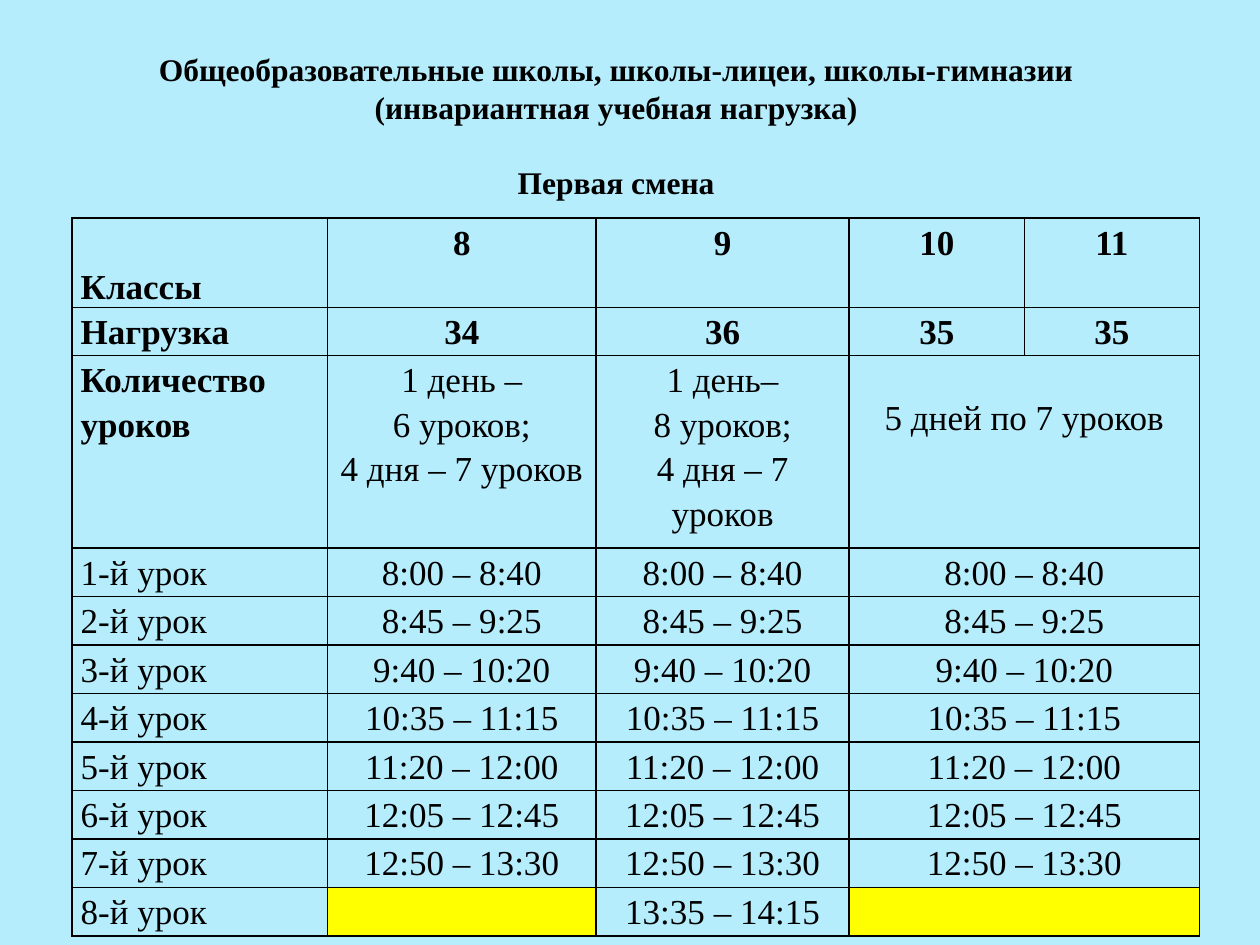
from lxml.etree import SubElement
from pptx import Presentation
from pptx.dml.color import RGBColor
from pptx.enum.text import MSO_ANCHOR, MSO_AUTO_SIZE, PP_ALIGN
from pptx.oxml.ns import qn
from pptx.util import Inches, Pt

FONT = "Times New Roman"
BLACK = RGBColor(0x00, 0x00, 0x00)
SKY = RGBColor(0xB5, 0xED, 0xFD)
YELLOW = RGBColor(0xFF, 0xFF, 0x00)

TITLE = [
    "Общеобразовательные школы, школы-лицеи, школы-гимназии",
    "(инвариантная учебная нагрузка)",
    "Первая смена",
]
HEADER = [
    ["Классы", "8", "9", "10", "11"],
    ["Нагрузка", "34", "36", "35", "35"],
    ["Количество уроков", "1 день –\n6 уроков;\n4 дня – 7 уроков",
     "1 день–\n8 уроков;\n4 дня – 7 уроков", "5 дней по 7 уроков", ""],
]
TIMES = ["8:00 – 8:40", "8:45 – 9:25", "9:40 – 10:20", "10:35 – 11:15",
         "11:20 – 12:00", "12:05 – 12:45", "12:50 – 13:30"]
LESSONS = [[f"{n}-й урок", t, t, t, ""] for n, t in enumerate(TIMES, 1)]
LAST = ["8-й урок", "", "13:35 – 14:15", "", ""]
ROWS = HEADER + LESSONS + [LAST]

COLS = [2.03, 2.13, 2.01, 1.39, 1.39]
HEIGHTS = [0.71, 0.38, 1.53] + [0.385] * 8
COUNT_ROW = 2


def style(p, size, bold, align):
    p.alignment = align
    for r in p.runs:
        r.font.name = FONT
        r.font.size = Pt(size)
        r.font.bold = bold
        r.font.color.rgb = BLACK


def add_borders(cell):
    tcPr = cell._tc.get_or_add_tcPr()
    for side in ("a:lnL", "a:lnR", "a:lnT", "a:lnB"):
        ln = SubElement(tcPr, qn(side), w=str(Pt(1)))
        fill = SubElement(ln, qn("a:solidFill"))
        SubElement(fill, qn("a:srgbClr"), val=str(BLACK))


def add_title(s):
    sp = s.shapes.title
    sp.left, sp.top, sp.width, sp.height = map(Inches, (0.33, 0.35, 9.12, 1.31))
    tf = sp.text_frame
    tf.text = "\n".join(TITLE)
    tf.word_wrap = True
    tf.auto_size = MSO_AUTO_SIZE.NONE
    tf.vertical_anchor = MSO_ANCHOR.TOP
    for p in tf.paragraphs:
        style(p, 18, True, PP_ALIGN.CENTER)
    tf.paragraphs[-1].space_before = Pt(21)


def fill_cell(cell, row, col, text):
    cell.margin_left = cell.margin_right = Inches(0.07)
    cell.margin_top = cell.margin_bottom = 0
    add_borders(cell)
    if row == len(ROWS) - 1 and not text:
        cell.fill.solid()
        cell.fill.fore_color.rgb = YELLOW
    else:
        cell.fill.background()
    cell.text = text
    bold = row < COUNT_ROW or (row == COUNT_ROW and col == 0)
    for p in cell.text_frame.paragraphs:
        p.line_spacing = 1.15
        style(p, 20, bold, PP_ALIGN.CENTER if col else PP_ALIGN.LEFT)


def add_schedule(s):
    table = s.shapes.add_table(
        len(ROWS), len(COLS), Inches(0.57), Inches(1.73),
        Inches(sum(COLS)), Inches(sum(HEIGHTS))).table
    table.first_row = table.horz_banding = False
    for column, width in zip(table.columns, COLS):
        column.width = Inches(width)
    for row, height in zip(table.rows, HEIGHTS):
        row.height = Inches(height)
    for i, row in enumerate(ROWS):
        for j, text in enumerate(row):
            fill_cell(table.cell(i, j), i, j, text)
        if i >= COUNT_ROW:
            table.cell(i, 3).merge(table.cell(i, 4))
    table.cell(0, 0).vertical_anchor = MSO_ANCHOR.BOTTOM
    table.cell(COUNT_ROW, 3).margin_top = Inches(0.3)


def main():
    prs = Presentation()
    prs.slide_width, prs.slide_height = Inches(10), Inches(7.5)
    s = prs.slides.add_slide(prs.slide_layouts[5])
    s.background.fill.solid()
    s.background.fill.fore_color.rgb = SKY
    add_title(s)
    add_schedule(s)
    prs.save("out.pptx")


if __name__ == "__main__":
    main()
